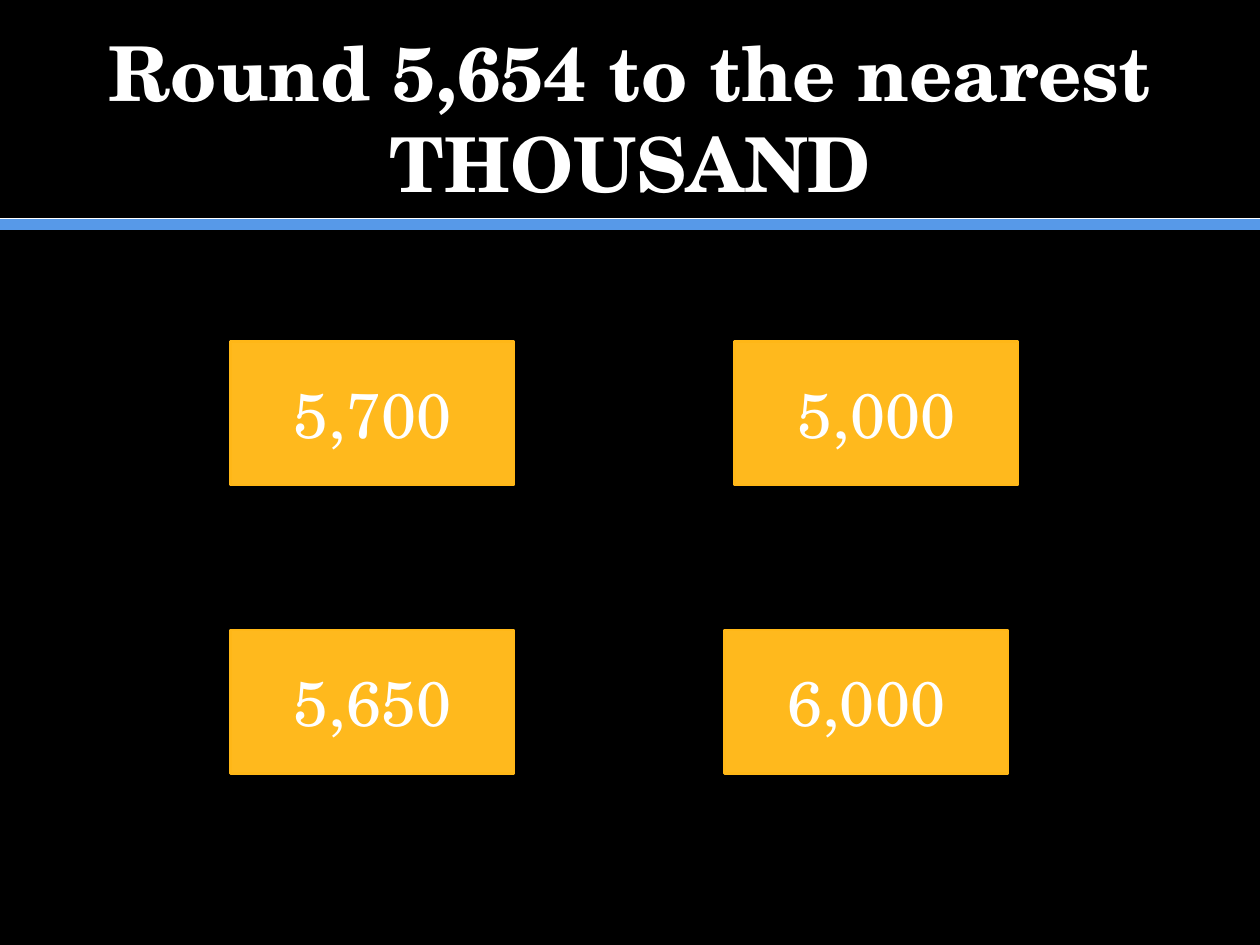
from dataclasses import dataclass

from lxml import etree
from pptx import Presentation
from pptx.dml.color import RGBColor
from pptx.enum.shapes import MSO_CONNECTOR, MSO_SHAPE
from pptx.enum.text import MSO_ANCHOR, PP_ALIGN
from pptx.oxml.ns import qn
from pptx.util import Inches, Pt

STRAIGHT = MSO_CONNECTOR.STRAIGHT
BUTTON = MSO_SHAPE.ACTION_BUTTON_CUSTOM
MIDDLE = MSO_ANCHOR.MIDDLE
CENTER = PP_ALIGN.CENTER


@dataclass(frozen=True)
class Theme:
    font: str = "TeX Gyre Schola"
    title_size: float = 43.2
    answer_size: float = 36
    background: RGBColor = RGBColor(0x00, 0x00, 0x00)
    text: RGBColor = RGBColor(0xFF, 0xFF, 0xFF)
    band: RGBColor = RGBColor(0x57, 0x99, 0xE8)
    button: RGBColor = RGBColor(0xFF, 0xB9, 0x1D)
    button_edge: RGBColor = RGBColor(0xFF, 0xB7, 0x17)


theme = Theme()


def write_centered(shape, words, size, bold=False):
    frame = shape.text_frame
    frame.text = words
    frame.word_wrap = True
    frame.vertical_anchor = MIDDLE
    para = frame.paragraphs[0]
    para.alignment = CENTER
    font = para.runs[0].font
    font.name = theme.font
    font.size = Pt(size)
    font.bold = bold
    font.color.rgb = theme.text


deck = Presentation()
deck.slide_width, deck.slide_height = Inches(10), Inches(7.5)
page = deck.slides.add_slide(deck.slide_layouts[6])
page.background.fill.solid()
page.background.fill.fore_color.rgb = theme.background

# Rules under the title
for height, color, weight in ((1.78, theme.band, 7), (1.73, theme.text, 0.5)):
    rule = page.shapes.add_connector(
        STRAIGHT, 0, Inches(height), deck.slide_width, Inches(height))
    rule.line.color.rgb = color
    rule.line.width = Pt(weight)
    etree.SubElement(rule._element.spPr, qn("a:effectLst"))

# Question
title = page.shapes.add_textbox(Inches(0.5), Inches(0.3), Inches(9), Inches(1.25))
write_centered(title, "Round 5,654 to the nearest THOUSAND", theme.title_size, bold=True)

# Answer buttons: two rows, the lower right one slightly inset
answer_rows = (
    (2.71, ((1.83, "5,700"), (5.83, "5,000"))),
    (5, ((1.83, "5,650"), (5.75, "6,000"))),
)
for top, answers in answer_rows:
    for left, answer in answers:
        button = page.shapes.add_shape(
            BUTTON, Inches(left), Inches(top), Inches(2.25), Inches(1.14))
        button.shadow.inherit = False
        button.fill.solid()
        button.fill.fore_color.rgb = theme.button
        button.line.color.rgb = theme.button_edge
        button.line.width = Pt(1.5)
        write_centered(button, answer, theme.answer_size)

deck.save("out.pptx")
